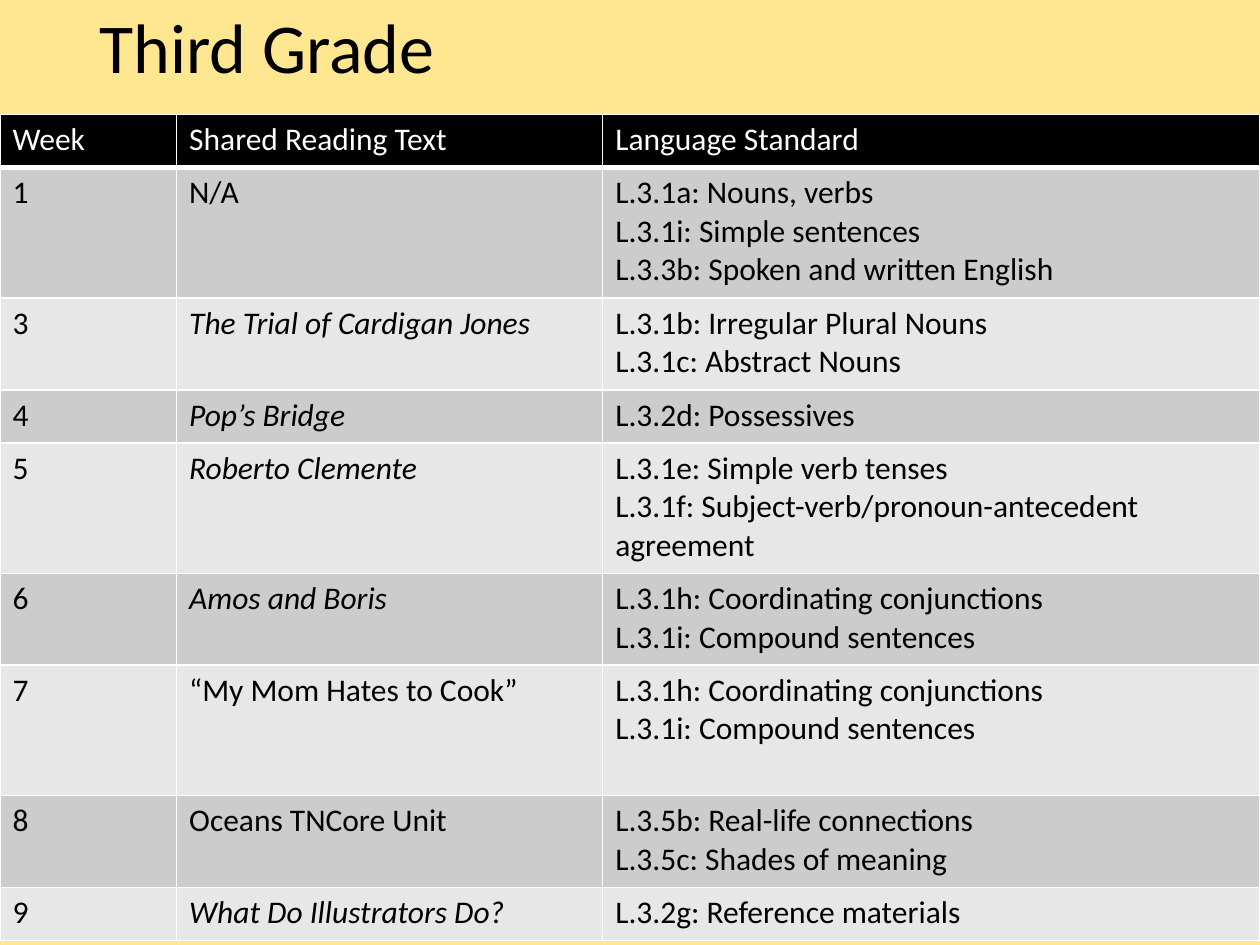
import pptx
import pptx.dml.color
import pptx.enum.text
import pptx.oxml
import pptx.oxml.ns
import pptx.util
from pptx.util import Cm

FONT = "Calibri"
COLUMN_WIDTHS = [3.56, 8.59, 13.25]
ONE_LINE_HEIGHT = 1.07
EXTRA_LINE_HEIGHT = 0.78
HEADINGS = ["Week", "Shared Reading Text", "Language Standard"]

# week, shared text, whether the text is a book title, standards, lines of room
WEEKS = [
    ("1", "N/A", False,
     "L.3.1a: Nouns, verbs\nL.3.1i: Simple sentences\n"
     "L.3.3b: Spoken and written English", 3),
    ("3", "The Trial of Cardigan Jones", True,
     "L.3.1b: Irregular Plural Nouns\nL.3.1c: Abstract Nouns", 2),
    ("4", "Pop’s Bridge", True, "L.3.2d: Possessives", 1),
    ("5", "Roberto Clemente", True,
     "L.3.1e: Simple verb tenses\n"
     "L.3.1f: Subject-verb/pronoun-antecedent agreement", 3),
    ("6", "Amos and Boris", True,
     "L.3.1h: Coordinating conjunctions\nL.3.1i: Compound sentences", 2),
    ("7", "“My Mom Hates to Cook”", False,
     "L.3.1h: Coordinating conjunctions\nL.3.1i: Compound sentences", 3),
    ("8", "Oceans TNCore Unit", False,
     "L.3.5b: Real-life connections\nL.3.5c: Shades of meaning", 2),
    ("9", "What Do Illustrators Do?", True, "L.3.2g: Reference materials", 1),
]


def rgb(color):
    return pptx.dml.color.RGBColor.from_string(color)


def format_font(paragraph, size, color, italic=False):
    paragraph.font.name = FONT
    paragraph.font.size = pptx.util.Pt(size)
    paragraph.font.color.rgb = rgb(color)
    paragraph.font.italic = italic


def add_borders(cell, color, widths):
    """Draw the cell's borders; widths maps L, R, T and B to points."""
    properties = cell._tc.get_or_add_tcPr()
    for side, width in widths.items():
        properties.append(pptx.oxml.parse_xml(
            f'<a:ln{side} {pptx.oxml.ns.nsdecls("a")} w="{pptx.util.Pt(width)}">'
            f'<a:solidFill><a:srgbClr val="{color}"/></a:solidFill>'
            f'</a:ln{side}>'))


def fill_cell(cell, text, fill, color, italic=False, top=1, bottom=1):
    cell.text = text
    for paragraph in cell.text_frame.paragraphs:
        format_font(paragraph, 18, color, italic)
    add_borders(cell, "FFFFFF", {"L": 1, "R": 1, "T": top, "B": bottom})
    cell.fill.solid()
    cell.fill.fore_color.rgb = rgb(fill)


def place_title(slide, left, top, width, height):
    title = slide.shapes.title
    title.left, title.top, title.width, title.height = left, top, width, height
    frame = title.text_frame
    frame.text = "Third Grade"
    frame.word_wrap = True
    frame.auto_size = pptx.enum.text.MSO_AUTO_SIZE.SHAPE_TO_FIT_TEXT
    frame.vertical_anchor = pptx.enum.text.MSO_ANCHOR.TOP
    frame.paragraphs[0].alignment = pptx.enum.text.PP_ALIGN.LEFT
    format_font(frame.paragraphs[0], 40, "000000")


def add_schedule(slide, left, top, width, height):
    schedule = slide.shapes.add_table(
        len(WEEKS) + 1, len(HEADINGS), left, top, width, height).table
    for column, column_width in zip(schedule.columns, COLUMN_WIDTHS):
        column.width = Cm(column_width)
    line_counts = [1] + [week[-1] for week in WEEKS]
    for row, lines in zip(schedule.rows, line_counts):
        row.height = Cm(ONE_LINE_HEIGHT + EXTRA_LINE_HEIGHT * (lines - 1))

    for column, heading in enumerate(HEADINGS):
        fill_cell(schedule.cell(0, column), heading, "000000", "FFFFFF", bottom=3)
    for row, (week, reading, is_book, standards, _) in enumerate(WEEKS, start=1):
        fill = "CCCCCC" if row % 2 else "E7E7E7"
        for column, text in enumerate((week, reading, standards)):
            fill_cell(schedule.cell(row, column), text, fill, "000000",
                      italic=is_book and column == 1, top=3 if row == 1 else 1)


def main():
    presentation = pptx.Presentation()
    presentation.slide_width = Cm(25.4)
    presentation.slide_height = Cm(19.05)
    slide = presentation.slides.add_slide(presentation.slide_layouts[5])
    slide.background.fill.solid()
    slide.background.fill.fore_color.rgb = rgb("FFE791")
    add_schedule(slide, Cm(0), Cm(2.31), presentation.slide_width, Cm(16.74))
    place_title(slide, Cm(1.75), Cm(-0.05), Cm(21.9), Cm(1.96))
    presentation.save("out.pptx")


if __name__ == "__main__":
    main()
